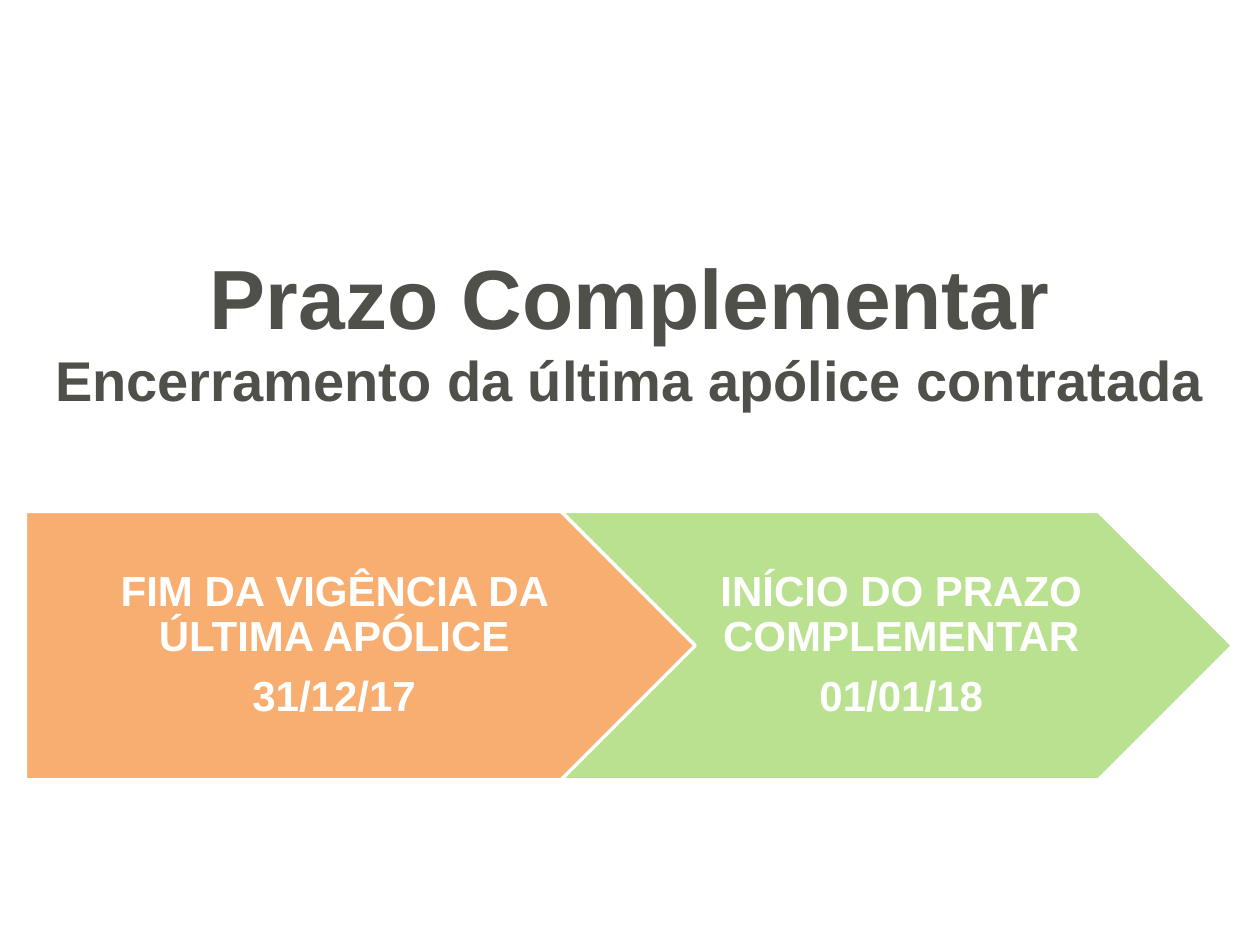
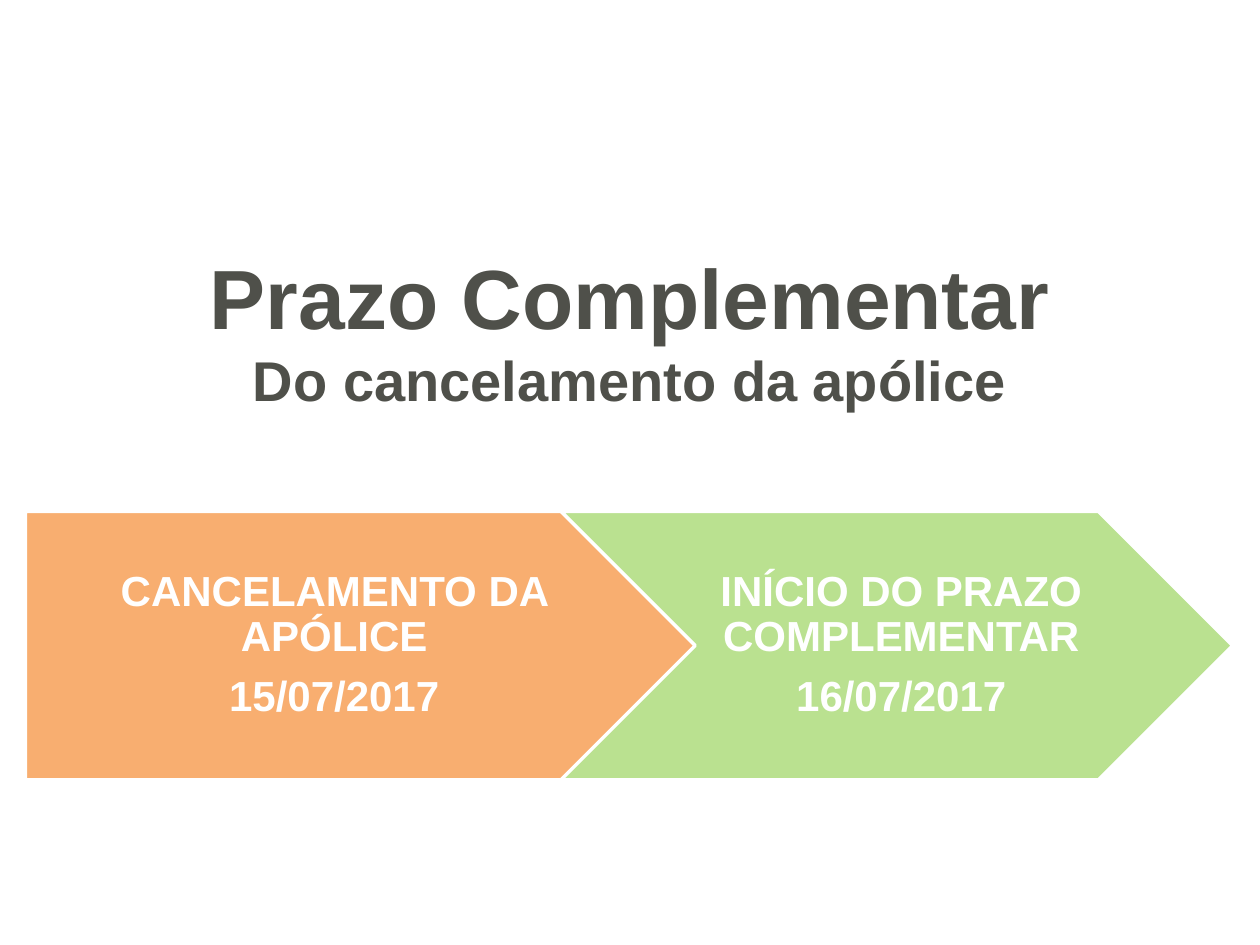
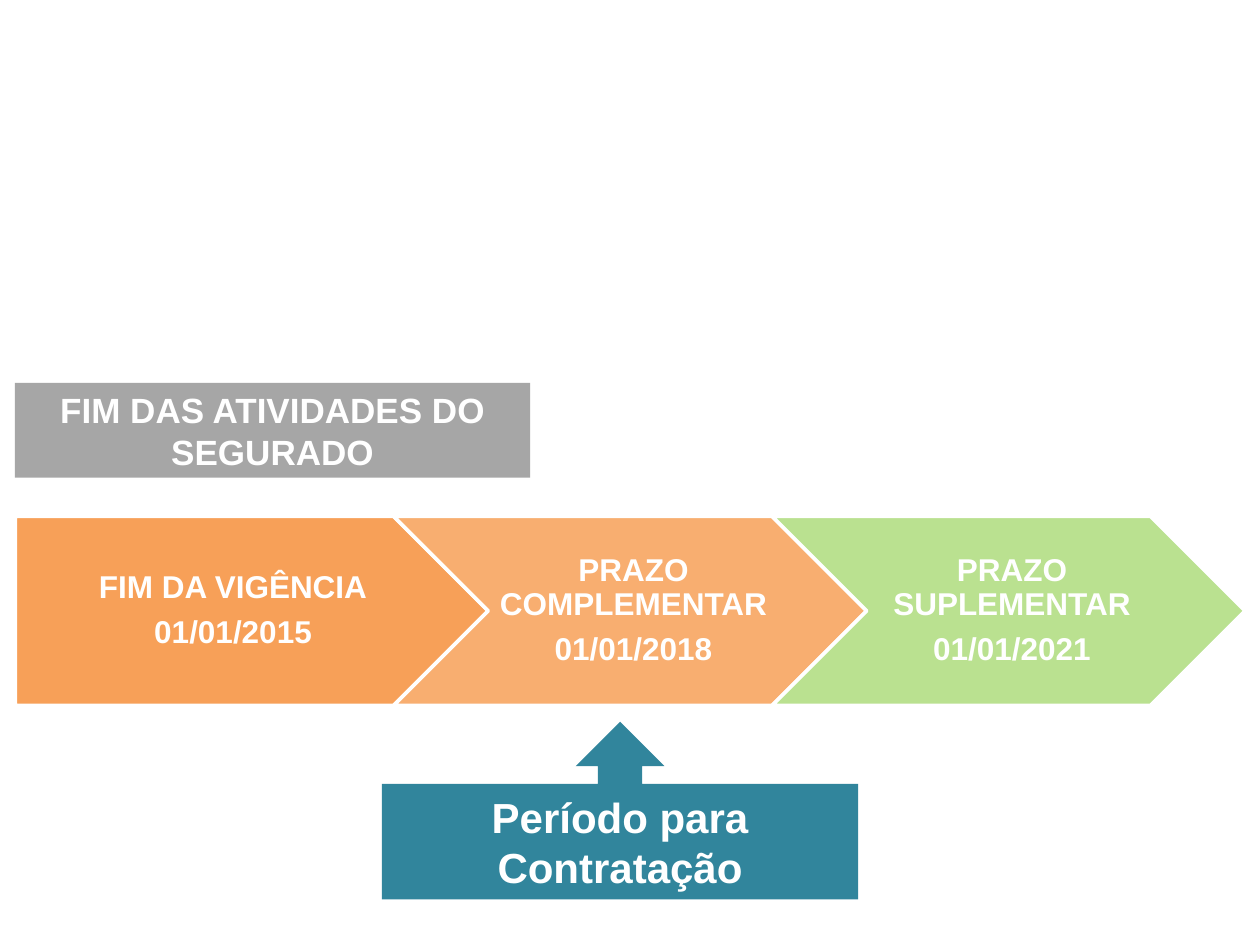
from dataclasses import dataclass

import pptx
import pptx.dml.color
import pptx.enum.shapes
import pptx.enum.text
import pptx.oxml
import pptx.oxml.ns
import pptx.presentation
import pptx.shapes.autoshape
import pptx.slide
import pptx.text.text
import pptx.util

Cm = pptx.util.Cm
Pt = pptx.util.Pt
SHAPE = pptx.enum.shapes.MSO_SHAPE
CENTER = pptx.enum.text.PP_ALIGN.CENTER
MIDDLE = pptx.enum.text.MSO_ANCHOR.MIDDLE
NO_AUTOFIT = pptx.enum.text.MSO_AUTO_SIZE.NONE

COLORS = {
    "white": "FFFFFF",
    "title": "4F504A",
    "orange": "F79646",
    "green": "92D050",
    "gray": "A6A6A6",
    "teal": "31859C",
}
FONT = {"name": "Arial", "bold": True}
FRAME = {"word_wrap": True, "auto_size": NO_AUTOFIT, "vertical_anchor": MIDDLE}
TITLE_BOX = {"left": Cm(0), "top": Cm(4.55), "width": Cm(25.4), "height": Cm(4.17)}
TITLE_ONLY, BLANK = 5, 6


@dataclass
class Step:
    label: str
    date: str
    color: str
    opacity: int


@dataclass
class Track:
    left: float
    top: float
    width: float
    height: float
    pitch: float
    size: int


@dataclass
class Callout:
    kind: SHAPE
    left: float
    top: float
    width: float
    height: float
    color: str
    text: str
    size: int


@dataclass
class TermSlide:
    subtitle: str
    steps: list[Step]


WIDE_TRACK = Track(0.51, 10.31, 13.54, 5.41, 10.8, 24)
NARROW_TRACK = Track(0.31, 10.41, 9.53, 3.81, 7.63, 18)

TERM_SLIDES = [
    TermSlide("Encerramento da última apólice contratada", [
        Step("FIM DA VIGÊNCIA DA ÚLTIMA APÓLICE", "31/12/17", "orange", 77),
        Step("INÍCIO DO PRAZO COMPLEMENTAR", "01/01/18", "green", 63),
    ]),
    TermSlide("Do cancelamento da apólice", [
        Step("CANCELAMENTO DA APÓLICE", "15/07/2017", "orange", 77),
        Step("INÍCIO DO PRAZO COMPLEMENTAR", "16/07/2017", "green", 63),
    ]),
]
PERIOD_STEPS = [
    Step("FIM DA VIGÊNCIA", "01/01/2015", "orange", 90),
    Step("PRAZO COMPLEMENTAR", "01/01/2018", "orange", 77),
    Step("PRAZO SUPLEMENTAR", "01/01/2021", "green", 63),
]
CALLOUTS = [
    Callout(SHAPE.RECTANGLE, 0.3, 7.72, 10.39, 1.91, "gray",
            "FIM DAS ATIVIDADES DO SEGURADO", 20),
    Callout(SHAPE.UP_ARROW_CALLOUT, 7.7, 14.55, 9.6, 3.58, "teal",
            "Período para Contratação", 24),
]


def set_all(target: object, values: dict) -> None:
    for name, value in values.items():
        setattr(target, name, value)


def rgb(color: str) -> pptx.dml.color.RGBColor:
    return pptx.dml.color.RGBColor.from_string(COLORS[color])


def add_run(p: pptx.text.text._Paragraph, text: str, size: int, color: str) -> None:
    r = p.add_run()
    r.text = text
    set_all(r.font, FONT | {"size": Pt(size)})
    r.font.color.rgb = rgb(color)


def add_filled(s: pptx.slide.Slide, kind: SHAPE, box: tuple[float, ...],
               color: str) -> pptx.shapes.autoshape.Shape:
    sp = s.shapes.add_shape(kind, *map(Cm, box))
    sp.shadow.inherit = False
    sp.fill.solid()
    sp.fill.fore_color.rgb = rgb(color)
    set_all(sp.text_frame, FRAME)
    return sp


def set_opacity(sp: pptx.shapes.autoshape.Shape, percent: int) -> None:
    clr = sp.fill._xPr.find(pptx.oxml.ns.qn("a:solidFill"))[0]
    alpha = pptx.oxml.parse_xml(
        f'<a:alpha {pptx.oxml.ns.nsdecls("a")} val="{percent * 1000}"/>')
    clr.append(alpha)


def add_track(s: pptx.slide.Slide, track: Track, steps: list[Step]) -> None:
    unit = track.size / 270
    for i, step in enumerate(steps):
        kind = SHAPE.CHEVRON if i else SHAPE.PENTAGON
        box = (track.left + i * track.pitch, track.top, track.width, track.height)
        sp = add_filled(s, kind, box, step.color)
        set_opacity(sp, step.opacity)
        sp.line.color.rgb = rgb("white")
        sp.line.width = Pt(2)
        tf = sp.text_frame
        set_all(tf, {
            "margin_left": Cm(unit * (3 if i else 4)),
            "margin_right": Cm(unit),
            "margin_top": Cm(unit * 2),
            "margin_bottom": Cm(unit * 2),
        })
        for p, text in zip((tf.paragraphs[0], tf.add_paragraph()), (step.label, step.date)):
            set_all(p, {"alignment": CENTER, "line_spacing": 0.9,
                        "space_after": Pt(track.size * 0.35)})
            add_run(p, text, track.size, "white")


def add_callout(s: pptx.slide.Slide, callout: Callout) -> None:
    box = (callout.left, callout.top, callout.width, callout.height)
    sp = add_filled(s, callout.kind, box, callout.color)
    sp.line.fill.background()
    p = sp.text_frame.paragraphs[0]
    p.alignment = CENTER
    add_run(p, callout.text, callout.size, "white")


def add_title(s: pptx.slide.Slide, subtitle: str) -> None:
    sp = s.shapes.title
    set_all(sp, TITLE_BOX)
    set_all(sp.text_frame, FRAME)
    p = sp.text_frame.paragraphs[0]
    p.alignment = CENTER
    add_run(p, "Prazo Complementar", 48, "title")
    p.add_line_break()
    add_run(p, subtitle, 32, "title")


def add_slide(prs: pptx.presentation.Presentation, layout: int) -> pptx.slide.Slide:
    return prs.slides.add_slide(prs.slide_layouts[layout])


def main() -> None:
    prs = pptx.Presentation()
    set_all(prs, {"slide_width": Cm(25.4), "slide_height": Cm(19.05)})
    for term in TERM_SLIDES:
        s = add_slide(prs, TITLE_ONLY)
        add_title(s, term.subtitle)
        add_track(s, WIDE_TRACK, term.steps)
    s = add_slide(prs, BLANK)
    add_track(s, NARROW_TRACK, PERIOD_STEPS)
    for callout in CALLOUTS:
        add_callout(s, callout)
    prs.save("out.pptx")


if __name__ == "__main__":
    main()
